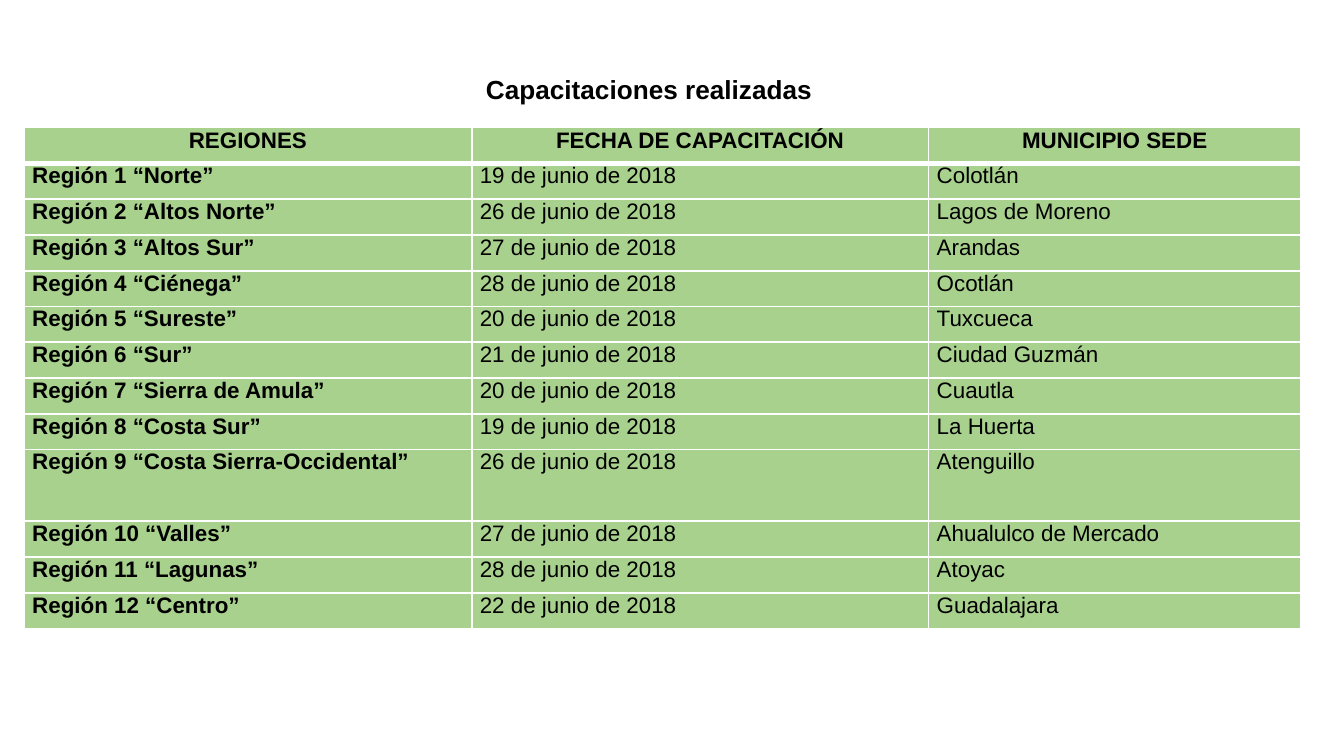
from lxml.etree import SubElement
from pptx import Presentation
from pptx.dml.color import RGBColor as RGB
from pptx.enum.text import MSO_AUTO_SIZE as AutoSize, PP_ALIGN as Align
from pptx.oxml.ns import qn
from pptx.util import Inches, Pt

TITLE = "Capacitaciones realizadas"
HEADERS = ("REGIONES", "FECHA DE CAPACITACIÓN", "MUNICIPIO SEDE")
TRAININGS = [
    ("Norte", 19, "Colotlán"),
    ("Altos Norte", 26, "Lagos de Moreno"),
    ("Altos Sur", 27, "Arandas"),
    ("Ciénega", 28, "Ocotlán"),
    ("Sureste", 20, "Tuxcueca"),
    ("Sur", 21, "Ciudad Guzmán"),
    ("Sierra de Amula", 20, "Cuautla"),
    ("Costa Sur", 19, "La Huerta"),
    ("Costa Sierra-Occidental", 26, "Atenguillo"),
    ("Valles", 27, "Ahualulco de Mercado"),
    ("Lagunas", 28, "Atoyac"),
    ("Centro", 22, "Guadalajara"),
]
COLORS = {"text": "000000", "cell": "A9D18E", "border": "FFFFFF"}
FONT = "Arial"
LEFT, TOP, HEIGHT = 0.18, 0.95, 3.73
COL_WIDTHS = (3.33, 3.4, 2.77)
TALL_ROW = 9


def write(p, text, size, bold, align):
    p.text = text
    p.alignment = align
    p.font.name = FONT
    p.font.size = Pt(size)
    p.font.bold = bold
    p.font.color.rgb = RGB.from_string(COLORS["text"])


def add_borders(cell, row):
    tc_pr = cell._tc.get_or_add_tcPr()
    thick_side = {0: "lnB", 1: "lnT"}.get(row)
    for side in ("lnL", "lnR", "lnT", "lnB"):
        width = Pt(3 if side == thick_side else 1)
        ln = SubElement(tc_pr, qn(f"a:{side}"), w=str(width))
        fill = SubElement(ln, qn("a:solidFill"))
        SubElement(fill, qn("a:srgbClr"), val=COLORS["border"])


prs = Presentation()
prs.slide_width = Inches(10)
prs.slide_height = Inches(10 * 9 / 16)
s = prs.slides.add_slide(prs.slide_layouts[6])

tf = s.shapes.add_textbox(Inches(3.46), Inches(0.5), Inches(2.74), Inches(0.34)).text_frame
tf.word_wrap = False
tf.auto_size = AutoSize.SHAPE_TO_FIT_TEXT
write(tf.paragraphs[0], TITLE, 14, True, Align.CENTER)

rows = [HEADERS] + [
    (f"Región {n} “{region}”", f"{day} de junio de 2018", town)
    for n, (region, day, town) in enumerate(TRAININGS, 1)
]
table = s.shapes.add_table(
    len(rows), len(HEADERS), Inches(LEFT), Inches(TOP), Inches(sum(COL_WIDTHS)), Inches(HEIGHT)
).table
for column, width in zip(table.columns, COL_WIDTHS):
    column.width = Inches(width)

row_height = HEIGHT / (len(rows) + 1)
for i, texts in enumerate(rows):
    table.rows[i].height = Inches(row_height * (2 if i == TALL_ROW else 1))
    for j, text in enumerate(texts):
        cell = table.cell(i, j)
        cell.margin_left = cell.margin_right = Inches(0.06)
        cell.margin_top = cell.margin_bottom = 0
        add_borders(cell, i)
        cell.fill.solid()
        cell.fill.fore_color.rgb = RGB.from_string(COLORS["cell"])
        align = Align.CENTER if i == 0 else Align.JUSTIFY
        write(cell.text_frame.paragraphs[0], text, 12, i == 0 or j == 0, align)

prs.save("out.pptx")
